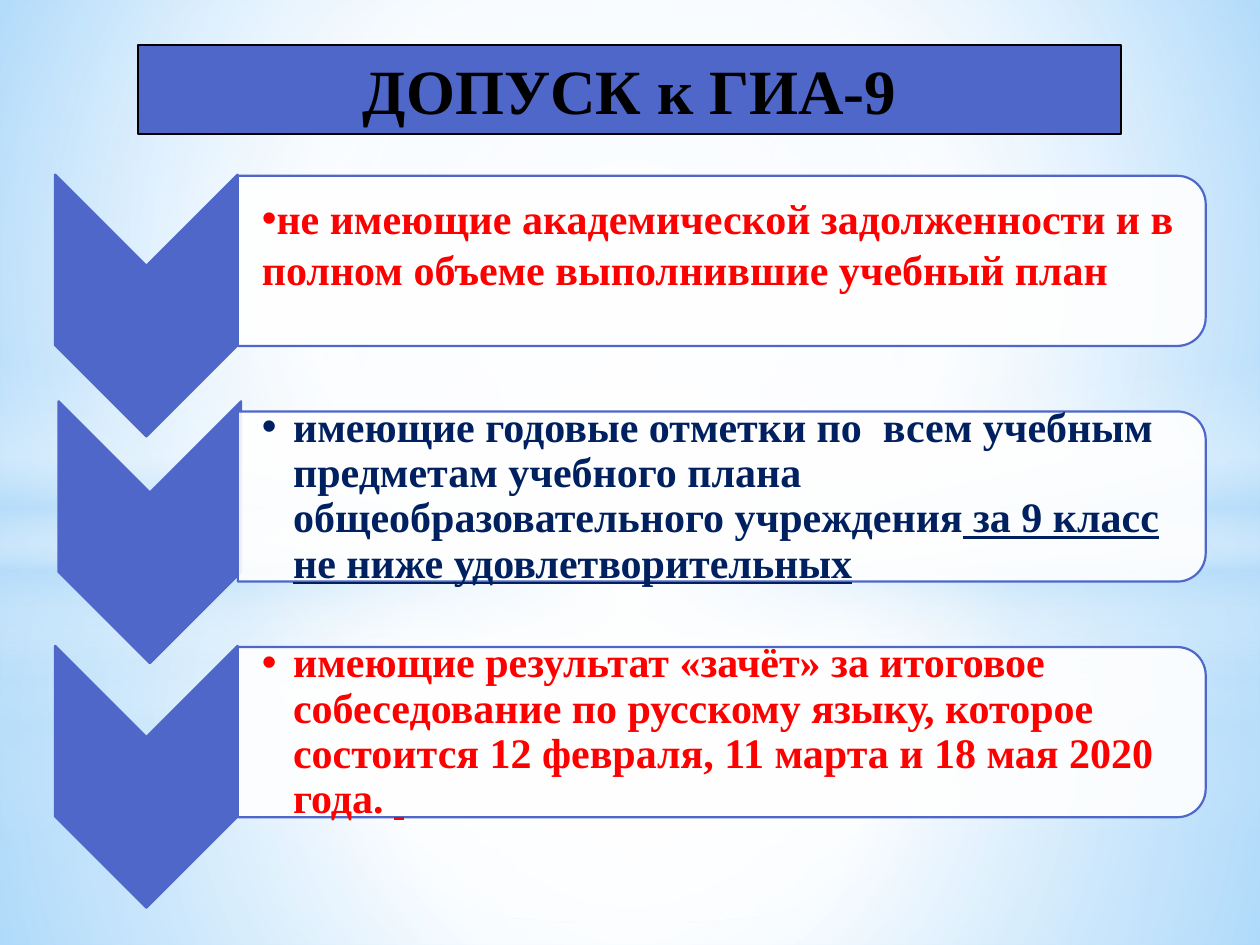
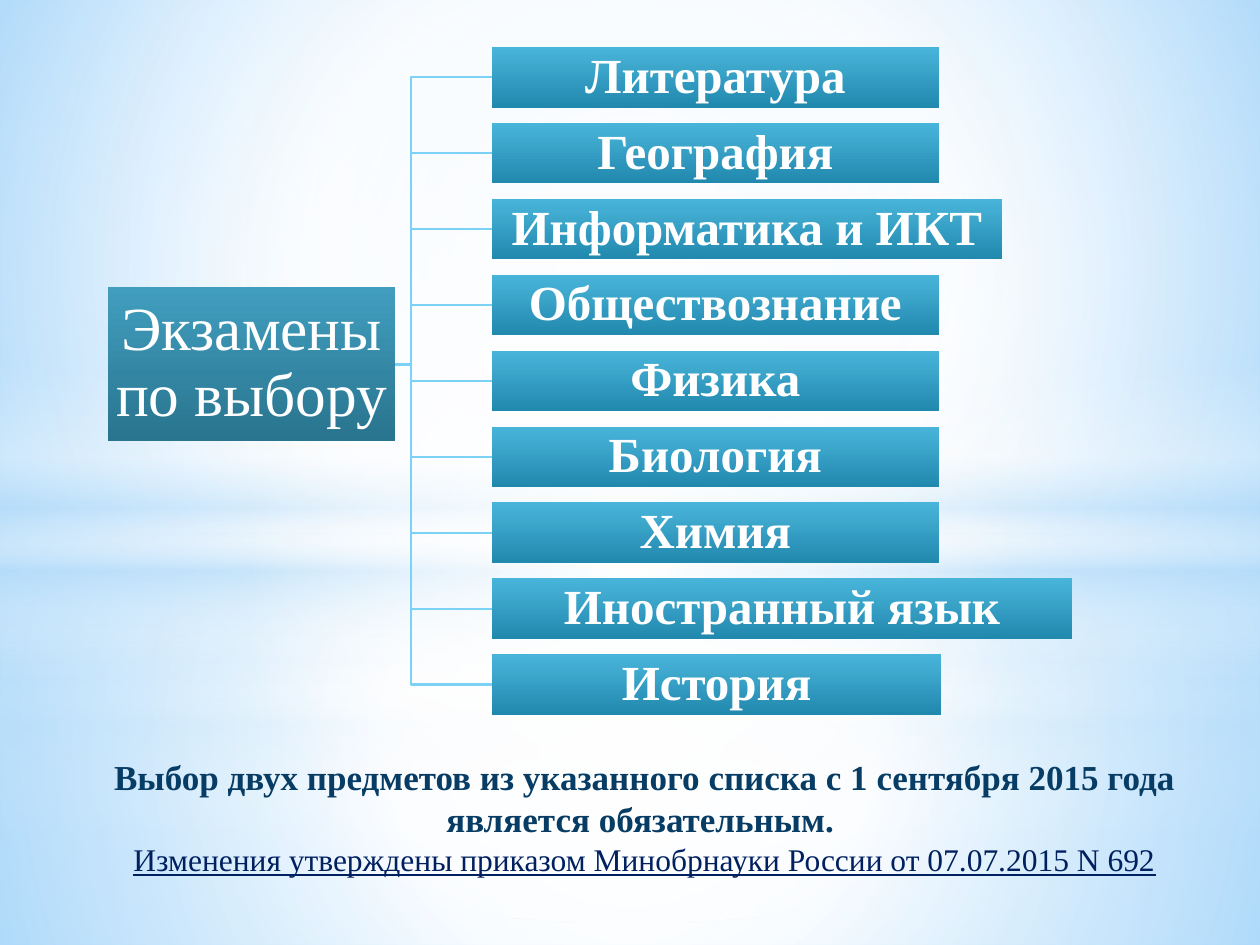
from lxml import etree
from pptx import Presentation
from pptx import util as u
from pptx.dml.color import RGBColor
from pptx.enum import shapes, text
from pptx.oxml.ns import qn

COLOURS = {
    "white": "FFFFFF", "black": "000000", "indigo": "4E67C8",
    "red": "FF0000", "navy": "002060", "petrol": "073C65",
    "line": "7CD2F4", "sky": "B4DCFA", "azure": "9ED5FF", "edge": "5BB9FF",
    "subject_top": "49B4DA", "subject_bottom": "2289AE",
    "topic_top": "419EBF", "topic_bottom": "29748E",
}
FONT = "Times New Roman"
KIND = shapes.MSO_SHAPE
CENTRE = (50, 50, 50, 50)
WIDTH, HEIGHT = 25.4, 19.05

REQUIREMENTS = [
    [("не имеющие академической задолженности и в полном объеме "
      "выполнившие учебный план", {"colour": "red", "bold": True})],
    [("имеющие годовые отметки по  всем учебным предметам учебного плана "
      "общеобразовательного учреждения", {"colour": "navy", "bold": True}),
     (" за 9 класс не ниже удовлетворительных",
      {"colour": "navy", "bold": True, "underline": True})],
    [("имеющие результат «зачёт» за итоговое собеседование по русскому языку, "
      "которое состоится 12 февраля, 11 марта и 18 мая 2020 года. ",
      {"colour": "red", "bold": True}),
     (" ", {"colour": "red", "underline": True})],
]
SUBJECTS = [
    ("Литература", 9.02), ("География", 9.02), ("Информатика и ИКТ", 10.29),
    ("Обществознание", 9.02), ("Физика", 9.02), ("Биология", 9.02),
    ("Химия", 9.02), ("Иностранный язык", 11.71), ("История", 9.07),
]


class Deck:
    """Hold the shared style and the current slide, and draw each kind of element."""

    def __init__(self):
        self.presentation = Presentation()
        self.presentation.slide_width = u.Cm(WIDTH)
        self.presentation.slide_height = u.Cm(HEIGHT)
        self.slide = None

    def add_slide(self, layout_name):
        layout = self.presentation.slide_layouts.get_by_name(layout_name)
        self.slide = self.presentation.slides.add_slide(layout)

    def gradient(self, fill, holder, stops, focus=None):
        fill.solid()
        gradient = etree.Element(qn("a:gradFill"), rotWithShape="1")
        stop_list = etree.SubElement(gradient, qn("a:gsLst"))
        for position, colour, opacity in stops:
            stop = etree.SubElement(stop_list, qn("a:gs"), pos=str(position * 1000))
            value = etree.SubElement(stop, qn("a:srgbClr"), val=COLOURS[colour])
            if opacity < 100:
                etree.SubElement(value, qn("a:alpha"), val=str(opacity * 1000))
        if focus:
            centre = etree.SubElement(gradient, qn("a:path"), path="circle")
            sides = {side: str(share * 1000) for side, share in zip("ltrb", focus)}
            etree.SubElement(centre, qn("a:fillToRect"), sides)
        else:
            etree.SubElement(gradient, qn("a:lin"), ang="5400000", scaled="0")
        holder.replace(holder.find(qn("a:solidFill")), gradient)

    def solid(self, shape, colour, opacity=100):
        shape.fill.solid()
        shape.fill.fore_color.rgb = RGBColor.from_string(COLOURS[colour])
        if opacity < 100:
            value = shape._element.spPr.find(qn("a:solidFill"))[0]
            etree.SubElement(value, qn("a:alpha"), val=str(opacity * 1000))

    def outline(self, shape, colour):
        shape.line.color.rgb = RGBColor.from_string(COLOURS[colour])
        shape.line.width = u.Pt(1.25)

    def shape(self, kind, left, top, width, height, rotation=0):
        shape = self.slide.shapes.add_shape(
            kind, u.Cm(left), u.Cm(top), u.Cm(width), u.Cm(height))
        shape.shadow.inherit = False
        shape.line.fill.background()
        shape.rotation = rotation
        return shape

    def gradient_shape(self, kind, box, stops, focus=None):
        shape = self.shape(kind, *box)
        self.gradient(shape.fill, shape._element.spPr, stops, focus)
        return shape

    def turned_shape(self, kind, centre_x, centre_y, width, height, colour, opacity=100):
        shape = self.shape(kind, centre_x - height / 2, centre_y - width / 2,
                           height, width, rotation=90)
        self.solid(shape, colour, opacity)
        self.outline(shape, "indigo")

    def text_box(self, left, top, width, height):
        box = self.slide.shapes.add_textbox(
            u.Cm(left), u.Cm(top), u.Cm(width), u.Cm(height))
        box.text_frame.word_wrap = True
        return box.text_frame

    def frame(self, frame, left=0.05, bottom=0.05):
        frame.word_wrap = True
        frame.vertical_anchor = text.MSO_ANCHOR.MIDDLE
        frame.margin_left, frame.margin_bottom = u.Cm(left), u.Cm(bottom)
        frame.margin_right = frame.margin_top = u.Cm(0.05)

    def run(self, paragraph, words, size, colour, bold=False, underline=False):
        run = paragraph.add_run()
        run.text = words
        font = run.font
        font.name, font.size = FONT, u.Pt(size)
        font.bold, font.underline = bold, underline
        font.color.rgb = RGBColor.from_string(COLOURS[colour])

    def bullet(self, paragraph, indent):
        properties = paragraph._p.get_or_add_pPr()
        properties.set("marL", str(u.Cm(indent)))
        properties.set("indent", str(u.Cm(-indent)))
        etree.SubElement(properties, qn("a:buFont"), typeface="Arial")
        etree.SubElement(properties, qn("a:buChar"), char="•")

    def title(self, words):
        title = self.slide.shapes.title
        title.left, title.top = u.Cm(2.79), u.Cm(0.91)
        title.width, title.height = u.Cm(19.81), u.Cm(1.8)
        self.solid(title, "indigo")
        self.outline(title, "black")
        frame = title.text_frame
        frame.auto_size = text.MSO_AUTO_SIZE.NONE
        self.frame(frame)
        paragraph = frame.paragraphs[0]
        paragraph.alignment = text.PP_ALIGN.CENTER
        self.run(paragraph, words, 36, "black", bold=True)

    def label_box(self, box, words, size, shade, bold=False):
        shape = self.gradient_shape(
            KIND.RECTANGLE, box, [(0, shade + "_top", 100), (100, shade + "_bottom", 100)])
        self.frame(shape.text_frame)
        paragraph = shape.text_frame.paragraphs[0]
        paragraph.alignment = text.PP_ALIGN.CENTER
        paragraph.line_spacing = 0.9
        self.run(paragraph, words, size, "white", bold)

    def branch(self, points):
        points = [(u.Cm(x), u.Cm(y)) for x, y in points]
        builder = self.slide.shapes.build_freeform(*points[0])
        builder.add_line_segments(points[1:], close=False)
        shape = builder.convert_to_shape()
        shape.fill.background()
        shape.shadow.inherit = False
        self.outline(shape, "line")

    def backdrop(self):
        master = self.presentation.slide_master
        fill = master.background.fill
        holder = next(master._element.iter(qn("p:bgPr")))
        self.gradient(fill, holder,
                      [(0, "azure", 100), (60, "white", 100), (100, "edge", 100)],
                      (20, 10, 20, 60))
        ground = [(0, "white", 91), (37, "white", 76), (100, "sky", 79)]
        heaven = [(0, "white", 89), (48, "white", 62), (100, "sky", 79)]
        haze = [(0, "white", 0), (29, "white", 30), (45, "sky", 40),
                (55, "white", 26), (65, "sky", 60), (100, "white", 0)]
        layers = []
        for horizon, haze_top, glow_end in [(14.17, 10.46, 56), (10.74, 7.37, 54)]:
            glow = [(0, "white", 100), (glow_end, "white", 0)]
            for kind, top, height, stops, focus in [
                (KIND.RECTANGLE, horizon, HEIGHT - horizon, ground, CENTRE),
                (KIND.RECTANGLE, 0, horizon, heaven, CENTRE),
                (KIND.RECTANGLE, haze_top, 6.35, haze, None),
                (KIND.OVAL, 4.45, 14.17, glow, CENTRE),
            ]:
                layers.append(self.gradient_shape(
                    kind, (0, top, WIDTH, height), stops, focus))
        for position, layer in enumerate(layers, start=2):
            master.shapes._spTree.insert(position, layer._element)


def admission_slide(deck):
    deck.title("ДОПУСК к ГИА-9")
    panel_width, panel_height = 19.51, 3.43
    text_height, first_centre, pitch = 3.1, 5.26, 4.75
    chevron_centres = [(2.95, 6.16), (3.02, 10.73), (2.95, 15.66)]
    text_layouts = [(0, 0.76, 1), (0.63, 0.05, 0.9), (0.63, 0.05, 0.9)]
    rows = zip(REQUIREMENTS, chevron_centres, text_layouts)
    for row, (runs, chevron_centre, (indent, bottom, spacing)) in enumerate(rows):
        centre = first_centre + row * pitch
        deck.turned_shape(KIND.CHEVRON, *chevron_centre, 3.68, 5.28, "indigo")
        deck.turned_shape(KIND.ROUND_2_SAME_RECTANGLE, 14.55, centre,
                          panel_width, panel_height, "white", 90)
        frame = deck.text_box(4.8, centre - text_height / 2, 19.33, text_height)
        deck.frame(frame, left=0.48, bottom=bottom)
        paragraph = frame.paragraphs[0]
        paragraph.line_spacing = spacing
        deck.bullet(paragraph, indent)
        for words, style in runs:
            deck.run(paragraph, words, 24, **style)


def electives_slide(deck):
    subject_left, subject_height, first_top, pitch = 9.91, 1.22, 0.95, 1.53
    topic_x, topic_y, trunk_x = 6.65, 7.35, 8.28
    tops = [first_top + row * pitch for row in range(len(SUBJECTS))]
    for top in tops:
        middle = top + subject_height / 2
        deck.branch([(topic_x, topic_y), (trunk_x, topic_y),
                     (trunk_x, middle), (subject_left, middle)])
    deck.label_box((2.18, 5.79, 5.79, 3.1), "Экзамены по выбору", 35, "topic")
    for top, (subject, width) in zip(tops, SUBJECTS):
        deck.label_box((subject_left, top, width, subject_height),
                       subject, 28, "subject", bold=True)
    frame = deck.text_box(1.3, 15.11, 23.39, 2.74)
    rule, order = frame.paragraphs[0], frame.add_paragraph()
    rule.alignment = order.alignment = text.PP_ALIGN.CENTER
    deck.run(rule, "Выбор двух предметов из указанного списка с 1 сентября 2015 года "
             "является обязательным. ", 20, "petrol", bold=True)
    deck.run(order, "Изменения утверждены приказом Минобрнауки России "
             "от 07.07.2015 N 692", 18, "navy", underline=True)


def main():
    deck = Deck()
    deck.add_slide("Title Only")
    deck.backdrop()
    admission_slide(deck)
    deck.add_slide("Blank")
    electives_slide(deck)
    deck.presentation.save("out.pptx")


if __name__ == "__main__":
    main()
